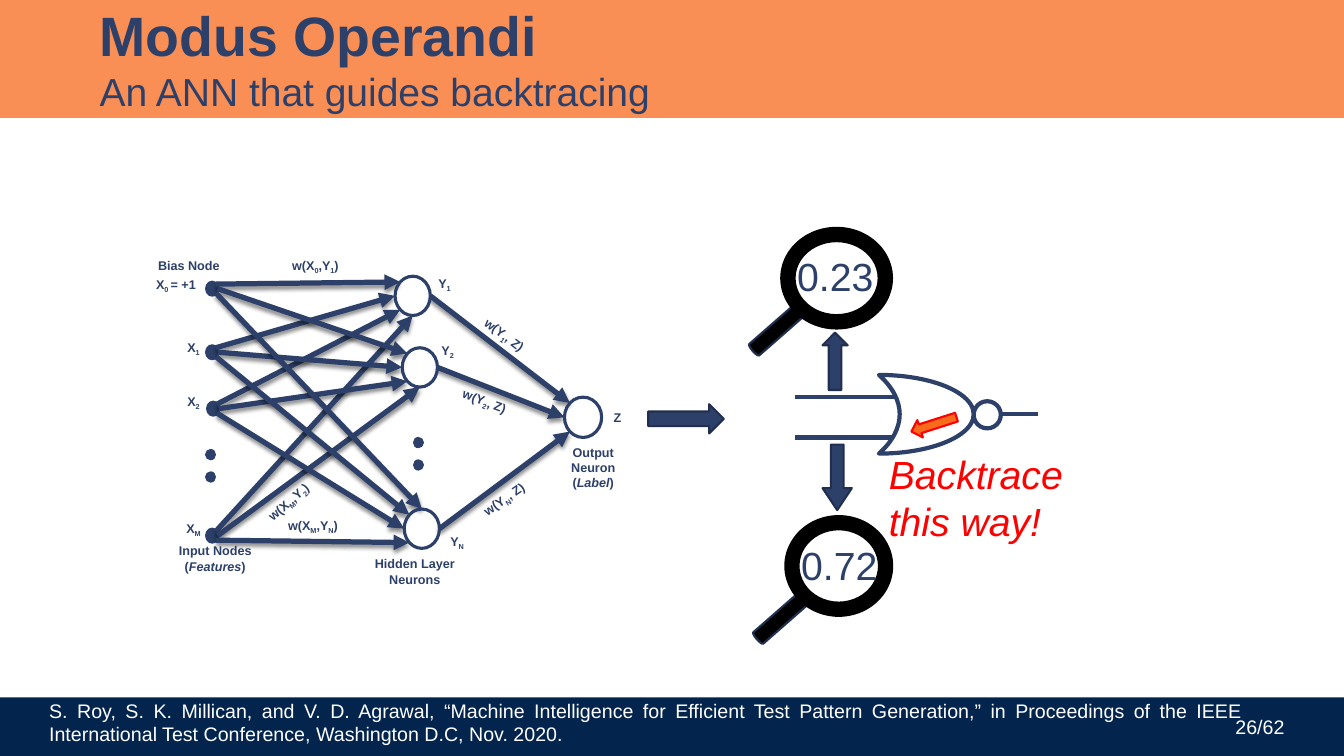
from dataclasses import dataclass
from math import cos, radians, sin

from lxml import etree
from pptx import Presentation
from pptx.dml.color import RGBColor
from pptx.enum.dml import MSO_LINE
from pptx.enum.shapes import MSO_CONNECTOR, MSO_SHAPE as Preset
from pptx.enum.text import MSO_ANCHOR as Anchor, MSO_AUTO_SIZE as AutoSize, PP_ALIGN as Align
from pptx.oxml import parse_xml
from pptx.oxml.ns import nsdecls, qn
from pptx.util import Pt


@dataclass(frozen=True)
class Theme:
    font: str = "Arial"
    ink: str = "2D4069"
    outline: str = "212F4E"
    band: str = "FA8F55"
    orange: str = "F86A1C"
    footer: str = "03244D"
    red: str = "FF0000"
    white: str = "FFFFFF"
    black: str = "000000"
    title_size: float = 39.6
    subtitle_size: float = 27.9
    value_size: float = 28
    footer_size: float = 14
    label_size: float = 9


THEME = Theme()
SITES = {"r": 0, "br": 45, "b": 90, "bl": 135, "l": 180, "tl": 225, "t": 270, "tr": 315}


def rgb(color):
    return RGBColor.from_string(color)


def style_run(run, size, color, bold=False, italic=False):
    font = run.font
    font.name, font.size, font.bold, font.italic = THEME.font, Pt(size), bold, italic
    font.color.rgb = rgb(color)


def add_text(slide, text, left, top, width, height, size=THEME.label_size, color=THEME.ink,
             bold=False, italic=False, align=Align.LEFT, wrap=True, rotation=0, anchor=Anchor.TOP):
    shape = slide.shapes.add_textbox(Pt(left), Pt(top), Pt(width), Pt(height))
    shape.rotation = rotation
    frame = shape.text_frame
    frame.word_wrap = wrap
    frame.vertical_anchor = anchor
    frame.auto_size = AutoSize.SHAPE_TO_FIT_TEXT if anchor == Anchor.TOP else AutoSize.NONE
    for number, line in enumerate(text.split("\n")):
        paragraph = frame.add_paragraph() if number else frame.paragraphs[0]
        paragraph.alignment = align
        for emphasis, chunk in enumerate(line.split("*")):
            for lowered, part in enumerate(chunk.split("~")):
                if part:
                    run = paragraph.add_run()
                    run.text = part
                    style_run(run, size, color, bold, italic or emphasis % 2 == 1)
                    if lowered % 2:
                        run.font._element.set("baseline", "-25000")


def add_preset(slide, preset, left, top, width, height, fill=None, line=None, weight=1.5,
               rotation=0, adjustments=()):
    shape = slide.shapes.add_shape(preset, Pt(left), Pt(top), Pt(width), Pt(height))
    shape.shadow.inherit = False
    shape.rotation = rotation
    for index, value in enumerate(adjustments):
        shape.adjustments[index] = value
    if fill:
        shape.fill.solid()
        shape.fill.fore_color.rgb = rgb(fill)
    else:
        shape.fill.background()
    if line:
        shape.line.color.rgb = rgb(line)
        shape.line.width = Pt(weight)
    else:
        shape.line.fill.background()


def add_line(slide, start, end, weight=3, arrow=False, dotted=False):
    connector = slide.shapes.add_connector(
        MSO_CONNECTOR.STRAIGHT, Pt(start[0]), Pt(start[1]), Pt(end[0]), Pt(end[1]))
    connector.line.color.rgb = rgb(THEME.ink)
    connector.line.width = Pt(weight)
    outline = connector.line._get_or_add_ln()
    if dotted:
        connector.line.dash_style = MSO_LINE.ROUND_DOT
        outline.set("cap", "rnd")
    shadow = ""
    if arrow:
        etree.SubElement(outline, qn("a:tailEnd"), type="triangle")
        shadow = (f'<a:outerShdw blurRad="{Pt(3)}" dist="{Pt(2.4)}" dir="5400000" rotWithShape="0">'
                  f'<a:srgbClr val="{THEME.black}"><a:alpha val="45000"/></a:srgbClr></a:outerShdw>')
    connector._element.spPr.append(
        parse_xml(f'<a:effectLst {nsdecls("a")}>{shadow}</a:effectLst>'))


def ellipse_site(node, site):
    left, top, width, height = node
    angle = radians(SITES[site])
    return left + width / 2 * (1 + cos(angle)), top + height / 2 * (1 + sin(angle))


def build_header(slide, left, top, width, height):
    add_preset(slide, Preset.RECTANGLE, left, top, width, height, fill=THEME.band)
    title = slide.shapes.title
    slide.shapes._spTree.append(title._element)
    title.left, title.top = Pt(left + 64), Pt(top + 2)
    title.width, title.height = Pt(width - 104), Pt(78)
    frame = title.text_frame
    frame.word_wrap = True
    frame.auto_size = AutoSize.NONE
    frame.vertical_anchor = Anchor.MIDDLE
    paragraph = frame.paragraphs[0]
    paragraph.alignment = Align.LEFT
    run = paragraph.add_run()
    run.text = "Modus Operandi"
    style_run(run, THEME.title_size, THEME.ink, bold=True)
    paragraph.add_line_break()
    run = paragraph.add_run()
    run.text = "An ANN that guides backtracing"
    style_run(run, THEME.subtitle_size, THEME.ink)


def build_network(slide, left, top):
    inputs = [(left + x, top + y, 7.9, 9.2)
              for x, y in ((43.6, 21.6), (43.6, 67), (44.3, 107.3), (43.6, 198))]
    hidden = [(left + x, top + y, 25.2, 28.1)
              for x, y in ((178.2, 17.3), (183.3, 68.4), (184.7, 183.6))]
    output = (left + 299.2, top + 103.7, 26.6, 28.8)
    arrivals = (("tl", "l", "bl", "b"), ("tl", "l", "bl", "b"), ("t", "tl", "l", "bl"))
    for node in inputs:
        add_preset(slide, Preset.OVAL, *node, fill=THEME.ink, line=THEME.ink, weight=2.25)
    for neuron, sites, departure, output_site in zip(
            hidden, arrivals, ("tr", "r", "br"), ("tl", "l", "bl")):
        for node, site in zip(inputs, sites):
            add_line(slide, ellipse_site(node, departure), ellipse_site(neuron, site), 3.75, arrow=True)
        add_line(slide, ellipse_site(neuron, "r"), ellipse_site(output, output_site), 3.75, arrow=True)
    for neuron in (*hidden, output):
        add_preset(slide, Preset.OVAL, *neuron, line=THEME.ink, weight=2.25)
    for x, y, length in ((194.8, 136.1, 29.5), (46.5, 144.7, 27.4)):
        add_line(slide, (left + x, top + y), (left + x, top + y + length), 8, dotted=True)

    captions = (
        ("Input Nodes\n(*Features*)", 0, 204.5, 99.4, 36.7),
        ("Hidden Layer\nNeurons", 151.6, 213.8, 81.4, 36.7),
        ("Output Neuron\n(*Label*)", 294.9, 133.9, 49.7, 64.1),
    )
    for text, x, y, width, height in captions:
        add_text(slide, text, left + x, top + y, width, height, bold=True, align=Align.CENTER)
    labels = (
        ("Bias Node", 1.8, 0.7, 66.2, 0), ("X~0 ~= +1", 0.4, 14.4, 49.7, 0),
        ("X~1~", 22.7, 59, 27.4, 0), ("X~2~", 22.7, 97.9, 27.4, 0), ("X~M~", 22, 188.6, 28.8, 0),
        ("Y~1~", 202, 13.7, 27.4, 0), ("Y~2~", 204.2, 61.2, 27.4, 0), ("Y~N~", 210.6, 198, 28.8, 0),
        ("Z", 327.3, 109.4, 22.3, 0), ("w(X~0~,Y~1~)", 97.6, 0.7, 58.3, 0),
        ("w(Y~1~, Z)", 230.8, 51.8, 54, 36.6), ("w(Y~2~, Z)", 217.8, 98.6, 54, 20.1),
        ("w(Y~N~, Z)", 233, 164.9, 54.7, 325.3), ("w(X~M~,Y~N~)", 94.7, 186.5, 58.3, 0),
        ("w(X~M~,Y~2~)", 78.2, 166.3, 56.9, 319.3),
    )
    for text, x, y, width, rotation in labels:
        add_text(slide, text, left + x, top + y, width, 23, bold=True, wrap=False, rotation=rotation)


def build_magnifier(slide, value, left, top, width, height):
    add_preset(slide, Preset.CAN, left - 7.9, top + 51, 10.8, 45.5, rotation=48.8,
               fill=THEME.black, line=THEME.outline)
    add_preset(slide, Preset.DONUT, left, top, width, height, fill=THEME.black, adjustments=(0.15,))
    add_text(slide, value, left + 5, top + 15, 73, 41, size=THEME.value_size)


def build_gate(slide, left, top):
    add_line(slide, (left + 251.2, top + 133.9), (left + 278.6, top + 133.9))
    for y in (121.7, 150.5):
        add_line(slide, (left + 105.1, top + y), (left + 177.8, top + y))
    add_preset(slide, Preset.OVAL, left + 232.5, top + 124.6, 19.4, 19.4,
               fill=THEME.white, line=THEME.ink, weight=3)
    add_preset(slide, Preset.MOON, left + 164.8, top + 105.8, 67.7, 56.2, rotation=180,
               fill=THEME.white, line=THEME.ink, weight=3, adjustments=(0.781,))
    build_magnifier(slide, "0.23", left + 94.3, top, 80.6, 73.4)
    build_magnifier(slide, "0.72", left + 97.2, top + 205.9, 77.8, 72.7)
    arrows = (
        (0, 126.7, 54, 20.9, 0, THEME.ink, THEME.outline, ()),
        (113, 87.1, 41, 18, 270, THEME.ink, THEME.outline, ()),
        (111.6, 168.5, 46.8, 20.9, 90, THEME.ink, THEME.outline, (0.438, 0.749)),
        (187.2, 134.6, 33.8, 13, 162.3, THEME.orange, THEME.red, ()),
    )
    for x, y, width, height, rotation, fill, line, adjustments in arrows:
        add_preset(slide, Preset.RIGHT_ARROW, left + x, top + y, width, height,
                   fill=fill, line=line, rotation=rotation, adjustments=adjustments)
    add_text(slide, "Backtrace this way!", left + 164.8, top + 156.2, 157.7, 75,
             size=THEME.value_size, color=THEME.red, italic=True)


def build_footer(slide, left, top, width, height):
    add_preset(slide, Preset.RECTANGLE, left, top, width, height, fill=THEME.footer)
    add_text(slide, "26/62", left + 872, top + 5.8, 56, 30, size=THEME.footer_size,
             color=THEME.white, align=Align.CENTER, anchor=Anchor.MIDDLE)
    add_text(slide, "S. Roy, S. K. Millican, and V. D. Agrawal, “Machine Intelligence for Efficient "
             "Test Pattern Generation,” in Proceedings of the IEEE International Test Conference, "
             "Washington D.C, Nov. 2020.", left + 28, top - 2.8, 867, 41,
             size=THEME.footer_size, color=THEME.white, align=Align.JUSTIFY)


def main():
    presentation = Presentation()
    presentation.slide_width, presentation.slide_height = Pt(960), Pt(540)
    slide = presentation.slides.add_slide(presentation.slide_layouts[5])
    build_footer(slide, 0, 498.2, 960, 41.8)
    build_header(slide, 0, 0, 960, 84.2)
    build_network(slide, 104, 180)
    build_gate(slide, 463, 162)
    presentation.save("out.pptx")


if __name__ == "__main__":
    main()
